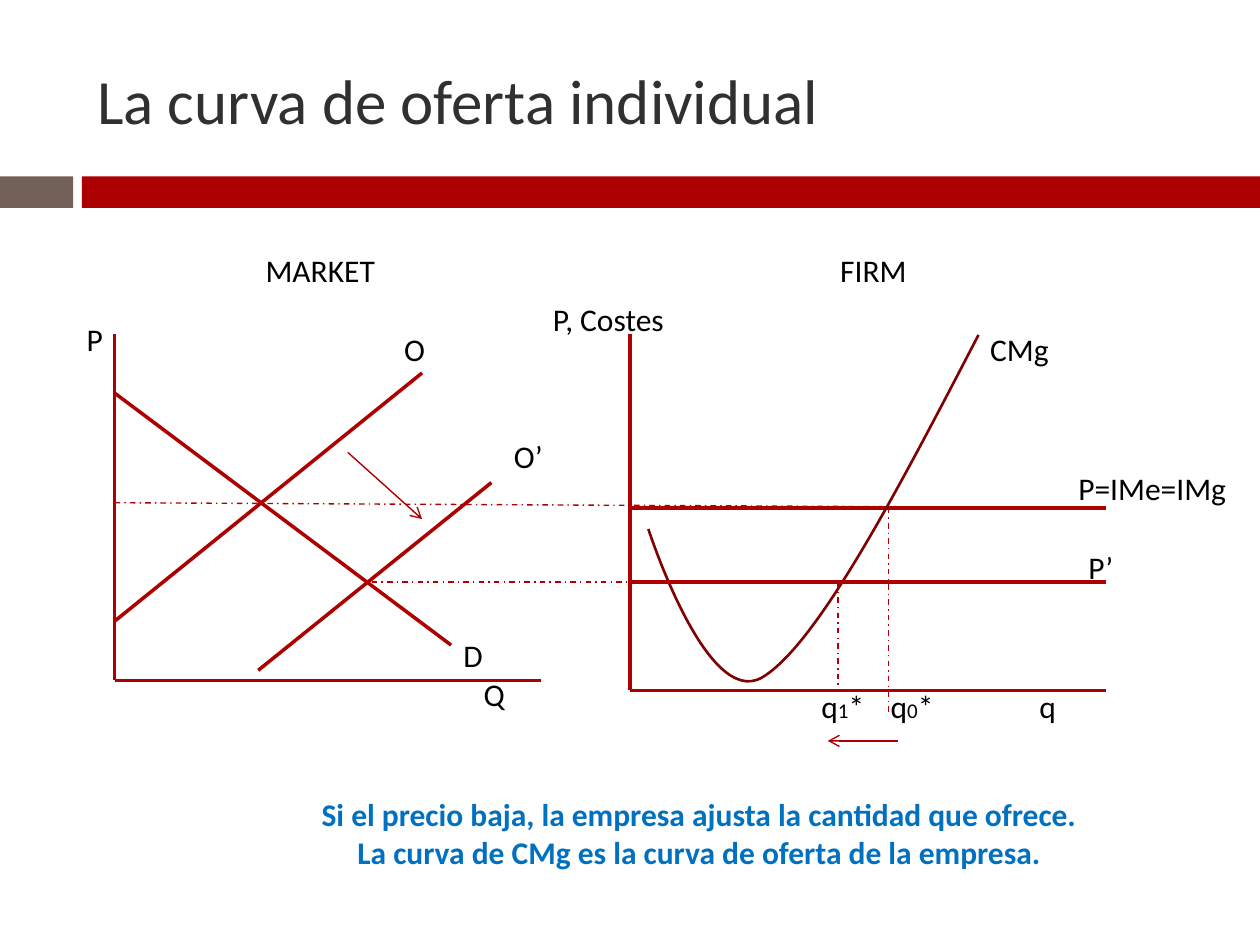
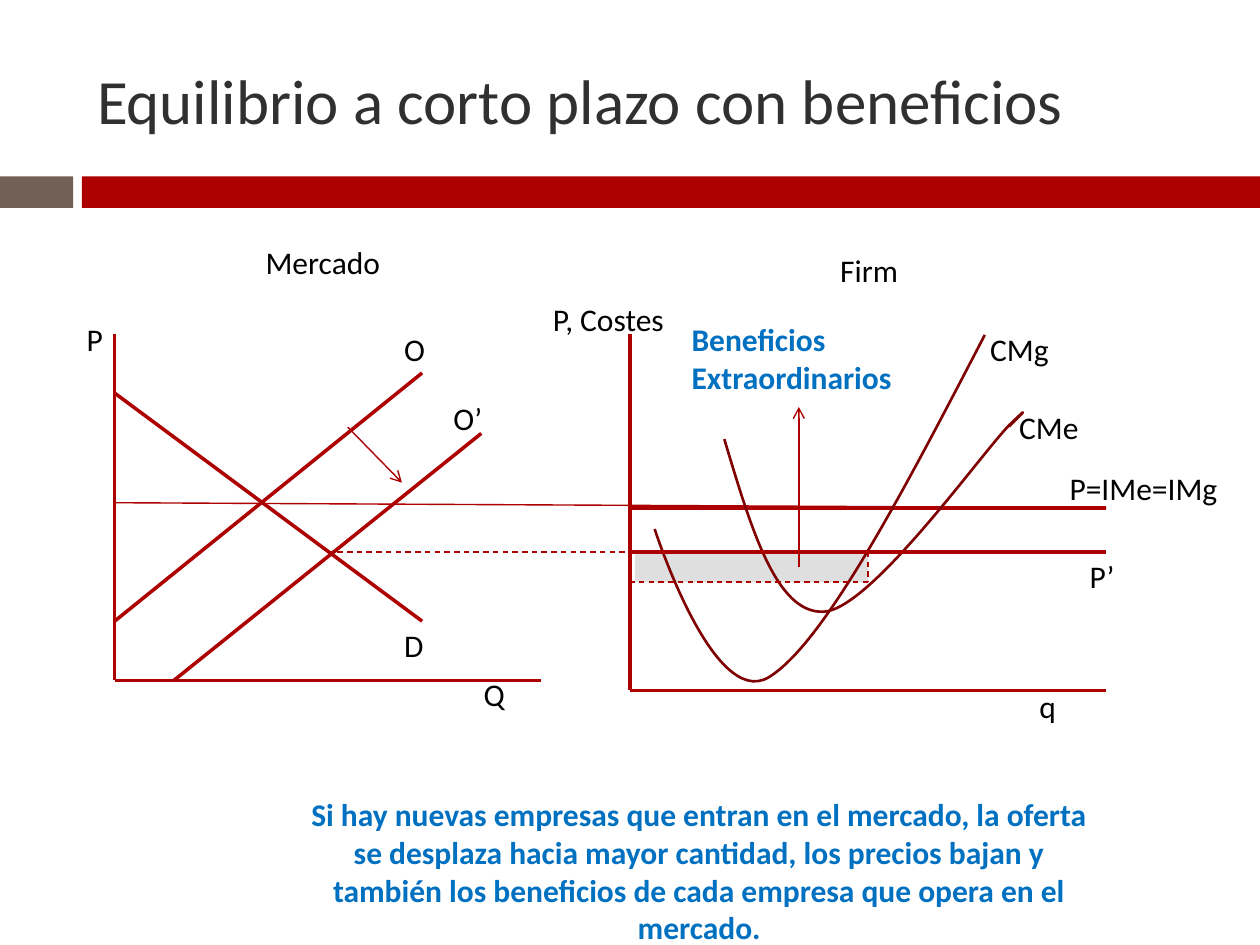
from math import cos, radians, sin

from lxml import etree
from pptx import Presentation
from pptx.dml.color import RGBColor
from pptx.enum.dml import MSO_LINE
from pptx.enum.shapes import MSO_CONNECTOR, MSO_SHAPE
from pptx.enum.text import MSO_ANCHOR, MSO_AUTO_SIZE, PP_ALIGN
from pptx.oxml.ns import qn
from pptx.util import Inches, Pt

STRAIGHT = MSO_CONNECTOR.STRAIGHT
RECTANGLE = MSO_SHAPE.RECTANGLE
DASH = MSO_LINE.DASH
DASH_DOT = MSO_LINE.DASH_DOT
LEFT = PP_ALIGN.LEFT
CENTER = PP_ALIGN.CENTER
MIDDLE = MSO_ANCHOR.MIDDLE
FIT_SHAPE = MSO_AUTO_SIZE.SHAPE_TO_FIT_TEXT

FONT = "Calibri"
COLORS = {
    "red": "AD0101",
    "dark_red": "800101",
    "brown": "726056",
    "title": "303030",
    "text": "000000",
    "blue": "0070C0",
    "profit": "CBCBCB",
}
THICK, THIN, CURVE = 2, 0.79, 1.5
TITLE_ONLY = 5

MARKET_X, MARKET_RIGHT, MARKET_BASE = 0.91, 4.29, 5.4
FIRM_X, FIRM_RIGHT, FIRM_BASE = 5, 8.78, 5.48
AXIS_TOP = 2.65
MARKET_PRICE, FIRM_PRICE = 3.99, 4.03
LOWER_LEVEL = 4.62


def rgb(name):
    return RGBColor.from_string(COLORS[name])


def format_run(run, size, color, bold=False):
    run.font.name = FONT
    run.font.size = Pt(size)
    run.font.bold = bold
    run.font.color.rgb = rgb(color)


def add_rectangle(slide, left, top, width, height, color, opacity=100):
    shape = slide.shapes.add_shape(
        RECTANGLE, Inches(left), Inches(top), Inches(width), Inches(height))
    shape.shadow.inherit = False
    shape.fill.solid()
    shape.fill.fore_color.rgb = rgb(color)
    shape.line.fill.background()
    if opacity < 100:
        fill_color = shape.element.find(".//" + qn("a:srgbClr"))
        etree.SubElement(fill_color, qn("a:alpha"), val=str(opacity * 1000))
    return shape


def add_line(slide, start, end, width=THICK, dash=None, arrow=False):
    points = [Inches(value) for value in (*start, *end)]
    connector = slide.shapes.add_connector(STRAIGHT, *points)
    connector.line.color.rgb = rgb("red")
    connector.line.width = Pt(width)
    if dash is not None:
        connector.line.dash_style = dash
    if arrow:
        outline = connector.element.find(".//" + qn("a:ln"))
        etree.SubElement(outline, qn("a:tailEnd"), type="arrow")
    etree.SubElement(connector.element.spPr, qn("a:effectLst"))


def turn_back(point, center, rotation):
    angle = radians(-rotation)
    dx, dy = point[0] - center[0], point[1] - center[1]
    return (Inches(center[0] + dx * cos(angle) - dy * sin(angle)),
            Inches(center[1] + dx * sin(angle) + dy * cos(angle)))


def add_curve(slide, points, center, rotation, shift=0):
    points = [turn_back(point, center, rotation) for point in points]
    builder = slide.shapes.build_freeform(*points[0])
    builder.add_line_segments(points[3::3], close=False)
    curve = builder.convert_to_shape()
    left, top = curve.left, curve.top
    segments = curve.element.findall(".//" + qn("a:lnTo"))
    for index, segment in enumerate(segments):
        segment.tag = qn("a:cubicBezTo")
        first_control = 3 * index + 1
        for position, (x, y) in enumerate(points[first_control:first_control + 2]):
            control = etree.Element(qn("a:pt"), x=str(x - left), y=str(y - top))
            segment.insert(position, control)
    curve.left = left + Inches(shift)
    curve.rotation = rotation
    curve.shadow.inherit = False
    curve.fill.background()
    curve.line.color.rgb = rgb("dark_red")
    curve.line.width = Pt(CURVE)


def add_text(slide, text, left, top, width=1.5, height=0.4,
             color="text", bold=False, align=LEFT):
    box = slide.shapes.add_textbox(
        Inches(left), Inches(top), Inches(width), Inches(height))
    text_frame = box.text_frame
    text_frame.word_wrap = True
    text_frame.auto_size = FIT_SHAPE
    text_frame.text = text
    paragraph = text_frame.paragraphs[0]
    paragraph.alignment = align
    format_run(paragraph.runs[0], 18, color, bold)
    return paragraph


def add_quantity(slide, index, left):
    paragraph = add_text(slide, "q", left, 5.4, width=0.71)
    for text, size in ((index, 12), ("*", 18)):
        run = paragraph.add_run()
        run.text = text
        format_run(run, size, "text")


def add_caption(slide, text, height):
    add_text(slide, text, 2.32, 6.26, 6.46, height, "blue", True, CENTER)


def add_labels(slide, labels):
    for text, left, top in labels:
        add_text(slide, text, left, top)


def add_title_slide(presentation, title):
    slide = presentation.slides.add_slide(presentation.slide_layouts[TITLE_ONLY])
    shape = slide.shapes.title
    shape.left, shape.top = Inches(0.67), Inches(0.25)
    shape.width, shape.height = Inches(8.92), Inches(1.08)
    shape.text_frame.text = title
    shape.text_frame.vertical_anchor = MIDDLE
    paragraph = shape.text_frame.paragraphs[0]
    paragraph.alignment = LEFT
    format_run(paragraph.runs[0], 36, "title")
    return slide


def add_master_bands(presentation, slide):
    master_tree = presentation.slide_master.shapes.element
    for left, width, color in ((0, 0.58, "brown"), (0.65, 9.35, "red")):
        band = add_rectangle(slide, left, 1.4, width, 0.25, color)
        master_tree.insert(2, band.element)


def add_market_and_firm(slide, price_dash=None, curve_shift=0):
    for x, right, base in ((MARKET_X, MARKET_RIGHT, MARKET_BASE),
                           (FIRM_X, FIRM_RIGHT, FIRM_BASE)):
        add_line(slide, (x, AXIS_TOP), (x, base))
        add_line(slide, (x, base), (right, base))
    add_line(slide, (MARKET_X, 4.93), (3.35, 2.96))
    add_line(slide, (MARKET_X, MARKET_PRICE), (FIRM_RIGHT, FIRM_PRICE), THIN, price_dash)
    add_line(slide, (FIRM_X, FIRM_PRICE), (FIRM_RIGHT, FIRM_PRICE))
    marginal_cost = [(7.77, 2.66), (7.13, 3.89), (6.49, 5.12), (6.05, 5.38),
                     (5.61, 5.63), (5.15, 4.2), (5.15, 4.2)]
    add_curve(slide, marginal_cost, (6.62, 4.09), 166.2, curve_shift)
    add_labels(slide, (
        ("P", 0.59, 2.49), ("O", 3.11, 2.57), ("Q", 3.74, 5.31),
        ("P, Costes", 4.29, 2.33), ("CMg", 7.76, 2.57), ("q", 8.15, 5.4)))


def build_supply_slide(slide):
    add_market_and_firm(slide, DASH_DOT)
    add_line(slide, (MARKET_X, 3.12), (3.58, 5.12))
    add_line(slide, (2.05, 5.32), (3.9, 3.83))
    add_line(slide, (FIRM_X, LOWER_LEVEL), (FIRM_RIGHT, LOWER_LEVEL))
    for start, end in (((2.95, LOWER_LEVEL), (FIRM_X, LOWER_LEVEL)),
                       ((6.65, LOWER_LEVEL), (6.65, FIRM_BASE)),
                       ((7.05, FIRM_PRICE), (7.05, 5.65))):
        add_line(slide, start, end, THIN, DASH_DOT)
    add_line(slide, (2.76, 3.59), (3.35, 4.12), THIN, arrow=True)
    add_line(slide, (7.13, 5.88), (6.57, 5.88), THIN, arrow=True)
    add_labels(slide, (
        ("MARKET", 2.01, 1.94), ("FIRM", 6.57, 1.94), ("D", 3.58, 5),
        ("O’", 3.98, 3.42), ("P=IMe=IMg", 8.46, 3.67), ("P’", 8.54, 4.3)))
    add_quantity(slide, "0", 6.97)
    add_quantity(slide, "1", 6.42)
    add_caption(slide, "Si el precio baja, la empresa ajusta la cantidad que ofrece. "
                "La curva de CMg es la curva de oferta de la empresa.", 0.71)


def build_profit_slide(slide):
    new_price, quantity = 4.38, 6.89
    add_rectangle(slide, 5.04, new_price, 1.85, 0.24, "profit", opacity=60)
    add_market_and_firm(slide, curve_shift=0.05)
    add_line(slide, (MARKET_X, 3.12), (3.35, 4.93))
    add_line(slide, (1.38, MARKET_BASE), (3.82, 3.44))
    average_cost = [(5.75, 3.49), (5.96, 4.19), (6.16, 4.88), (6.54, 4.86),
                    (6.91, 4.84), (7.77, 3.63), (8.01, 3.38),
                    (8.26, 3.14), (8.01, 3.39), (8.01, 3.39)]
    add_curve(slide, average_cost, (6.99, 4.1), 355.9)
    corners = [(2.6, new_price), (quantity, new_price),
               (quantity, LOWER_LEVEL), (FIRM_X, LOWER_LEVEL)]
    for start, end in zip(corners, corners[1:]):
        add_line(slide, start, end, THIN, DASH)
    add_line(slide, (FIRM_X, new_price), (FIRM_RIGHT, new_price))
    add_line(slide, (6.34, 4.5), (6.34, 3.23), THIN, arrow=True)
    add_line(slide, (2.76, 3.39), (3.19, 3.83), THIN, arrow=True)
    add_labels(slide, (
        ("Mercado", 2.01, 1.88), ("Firm", 6.57, 1.94), ("D", 3.11, 4.92),
        ("O’", 3.5, 3.12), ("CMe", 7.99, 3.19),
        ("P=IMe=IMg", 8.39, 3.67), ("P’", 8.55, 4.37)))
    add_text(slide, "Beneficios Extraordinarios", 5.39, 2.49, 1.89, 0.71, "blue", True)
    add_caption(slide, "Si hay nuevas empresas que entran en el mercado, la oferta se "
                "desplaza hacia mayor cantidad, los precios bajan y también los "
                "beneficios de cada empresa que opera en el mercado.", 1.31)


def main():
    presentation = Presentation()
    presentation.slide_width = Inches(10)
    presentation.slide_height = Inches(7.5)
    supply_slide = add_title_slide(presentation, "La curva de oferta individual")
    add_master_bands(presentation, supply_slide)
    build_supply_slide(supply_slide)
    build_profit_slide(
        add_title_slide(presentation, "Equilibrio a corto plazo con beneficios"))
    presentation.save("out.pptx")


if __name__ == "__main__":
    main()
